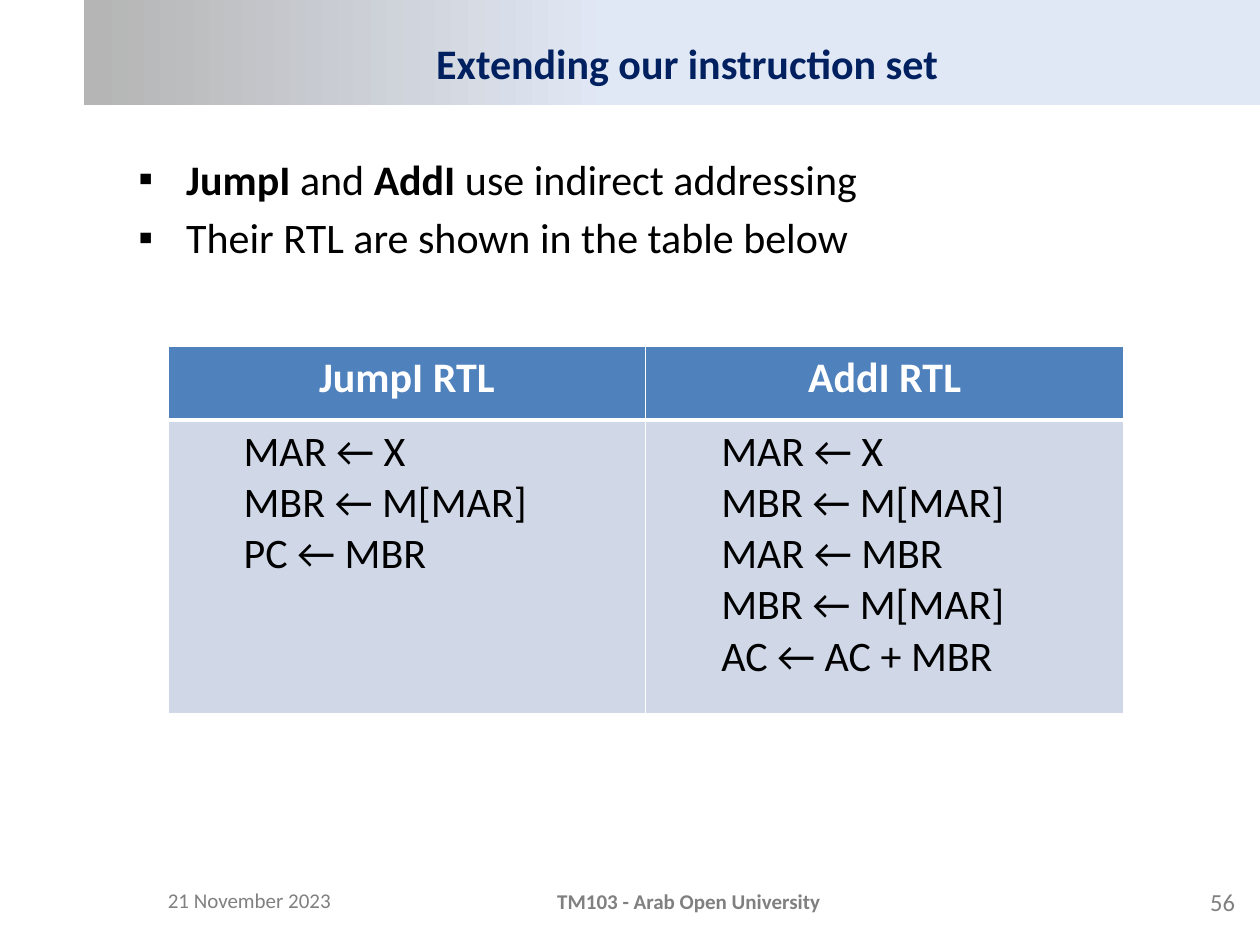
"""Build the slide on extending the instruction set with indirect addressing."""
from dataclasses import dataclass

from lxml.etree import SubElement
from pptx import Presentation
from pptx.dml.color import RGBColor
from pptx.enum.shapes import MSO_SHAPE
from pptx.enum.text import MSO_ANCHOR, MSO_AUTO_SIZE, PP_ALIGN
from pptx.oxml.ns import qn
from pptx.util import Inches, Pt


@dataclass(frozen=True)
class Theme:
    """Colours, type sizes and font of the slide."""
    font: str = "Calibri"
    title: str = "002060"
    text: str = "000000"
    white: str = "FFFFFF"
    muted: str = "808080"
    header: str = "4F81BD"
    cell: str = "D0D8E8"
    band_start: str = "B5B5B5"
    band_end: str = "E1E8F5"
    main_size: int = 24
    footer_size: int = 12
    number_size: int = 14


class SlideBuilder:
    """Places elements on a grid of 120 columns by 90 rows."""

    def __init__(self, presentation, theme):
        """Add a title-only slide and work out the grid unit."""
        self.theme = theme
        self.unit = presentation.slide_width / 120
        self.slide = presentation.slides.add_slide(presentation.slide_layouts[5])

    def place(self, *cells):
        """Turn grid lengths into slide lengths."""
        return [round(cell * self.unit) for cell in cells]

    def add_runs(self, paragraph, runs, color, size=None, bold=False, align=PP_ALIGN.LEFT):
        """Add runs to a paragraph, each a text or a text with its own weight."""
        paragraph.alignment = align
        for item in [runs] if isinstance(runs, str) else runs:
            text, weight = (item, bold) if isinstance(item, str) else item
            run = paragraph.add_run()
            run.text = text
            formats = {"name": self.theme.font, "size": Pt(size or self.theme.main_size), "bold": weight}
            for name, value in formats.items():
                setattr(run.font, name, value)
            run.font.color.rgb = RGBColor.from_string(color)

    def indent(self, paragraph, left, hanging=0.0, bullet=None):
        """Set the indent of a paragraph and its bullet, if any."""
        properties = paragraph._p.get_or_add_pPr()
        properties.set("marL", str(Inches(left)))
        properties.set("indent", str(Inches(-hanging)))
        if bullet:
            SubElement(properties, qn("a:buFont"), typeface="Arial")
            SubElement(properties, qn("a:buChar"), char=bullet)

    def paragraphs(self, frame, count):
        """Return the given number of paragraphs of an empty text frame."""
        return [frame.paragraphs[0]] + [frame.add_paragraph() for _ in range(count - 1)]

    def frame(self, shape, anchor):
        """Prepare the text frame of a shape."""
        frame = shape.text_frame
        formats = {"word_wrap": True, "auto_size": MSO_AUTO_SIZE.NONE, "vertical_anchor": anchor}
        for name, value in formats.items():
            setattr(frame, name, value)
        return frame

    def title(self, text, box):
        """Move and fill the title placeholder."""
        shape = self.slide.shapes.title
        for name, value in zip(("left", "top", "width", "height"), self.place(*box)):
            setattr(shape, name, value)
        frame = self.frame(shape, MSO_ANCHOR.MIDDLE)
        self.add_runs(frame.paragraphs[0], text, self.theme.title, bold=True, align=PP_ALIGN.CENTER)

    def band(self, box):
        """Draw the gradient band behind the title."""
        shape = self.slide.shapes.add_shape(MSO_SHAPE.RECTANGLE, *self.place(*box))
        shape.shadow.inherit = False
        shape.line.fill.background()
        shape.fill.gradient()
        shape.fill.gradient_angle = 0
        stops = ((0.01, self.theme.band_start), (0.45, self.theme.band_end))
        for stop, (position, color) in zip(shape.fill.gradient_stops, stops):
            stop.position = position
            stop.color.rgb = RGBColor.from_string(color)
        self.slide.shapes.title.element.addprevious(shape.element)

    def bullets(self, lines, box):
        """Add a bulleted list."""
        shape = self.slide.shapes.add_textbox(*self.place(*box))
        frame = self.frame(shape, MSO_ANCHOR.TOP)
        for index, (paragraph, runs) in enumerate(zip(self.paragraphs(frame, len(lines)), lines)):
            self.indent(paragraph, 0.38, 0.38, "▪")
            paragraph.space_before = Pt(4.8 if index else 0)
            self.add_runs(paragraph, runs, self.theme.text)

    def label(self, text, box, **style):
        """Add one line of footer text."""
        shape = self.slide.shapes.add_textbox(*self.place(*box))
        frame = self.frame(shape, MSO_ANCHOR.MIDDLE)
        self.add_runs(frame.paragraphs[0], text, self.theme.muted, **style)

    def fill_cell(self, cell, color, top, bottom):
        """Give a cell white borders and a plain fill."""
        properties = cell._tc.get_or_add_tcPr()
        for tag, width in (("lnL", 1), ("lnR", 1), ("lnT", top), ("lnB", bottom)):
            line = SubElement(properties, qn(f"a:{tag}"), w=str(Pt(width)))
            fill = SubElement(line, qn("a:solidFill"))
            SubElement(fill, qn("a:srgbClr"), val=self.theme.white)
        cell.fill.solid()
        cell.fill.fore_color.rgb = RGBColor.from_string(color)

    def table(self, columns, box, row_heights):
        """Add a table of headings with a list of steps below each."""
        table = self.slide.shapes.add_table(2, len(columns), *self.place(*box)).table
        table.horz_banding = False
        for row, height in zip(table.rows, self.place(*row_heights)):
            row.height = height
        for index, (heading, steps) in enumerate(columns.items()):
            header, body = table.cell(0, index), table.cell(1, index)
            self.fill_cell(header, self.theme.header, 1, 3)
            self.fill_cell(body, self.theme.cell, 3, 1)
            self.add_runs(header.text_frame.paragraphs[0], heading, self.theme.white,
                          bold=True, align=PP_ALIGN.CENTER)
            for paragraph, step in zip(self.paragraphs(body.text_frame, len(steps)), steps):
                self.indent(paragraph, 0.5)
                self.add_runs(paragraph, step, self.theme.text)


def main():
    """Build and save the presentation."""
    presentation = Presentation()
    presentation.slide_width, presentation.slide_height = Inches(10), Inches(7.5)
    theme = Theme()
    builder = SlideBuilder(presentation, theme)
    builder.title("Extending our instruction set", (10.9, 3, 109.1, 6))
    builder.band((8, 0, 112, 10))
    builder.bullets([
        [("JumpI", True), " and ", ("AddI", True), " use indirect addressing"],
        "Their RTL are shown in the table below",
    ], (12, 14, 107, 59.4))
    builder.table({
        "JumpI RTL": ["MAR ← X", "MBR ← M[MAR]", "PC ← MBR"],
        "AddI RTL": ["MAR ← X", "MBR ← M[MAR]", "MAR ← MBR", "MBR ← M[MAR]", "AC ← AC + MBR"],
    }, (16, 33, 91, 35), (7, 28))
    builder.label("21 November 2023", (14.8, 83.3, 28, 4.8), size=theme.footer_size)
    builder.label("TM103 - Arab Open University", (46.6, 83.4, 38, 4.8),
                  size=theme.footer_size, bold=True, align=PP_ALIGN.CENTER)
    builder.label("56", (90.8, 83.5, 28, 4.8), size=theme.number_size, align=PP_ALIGN.RIGHT)
    presentation.save("out.pptx")


if __name__ == "__main__":
    main()
